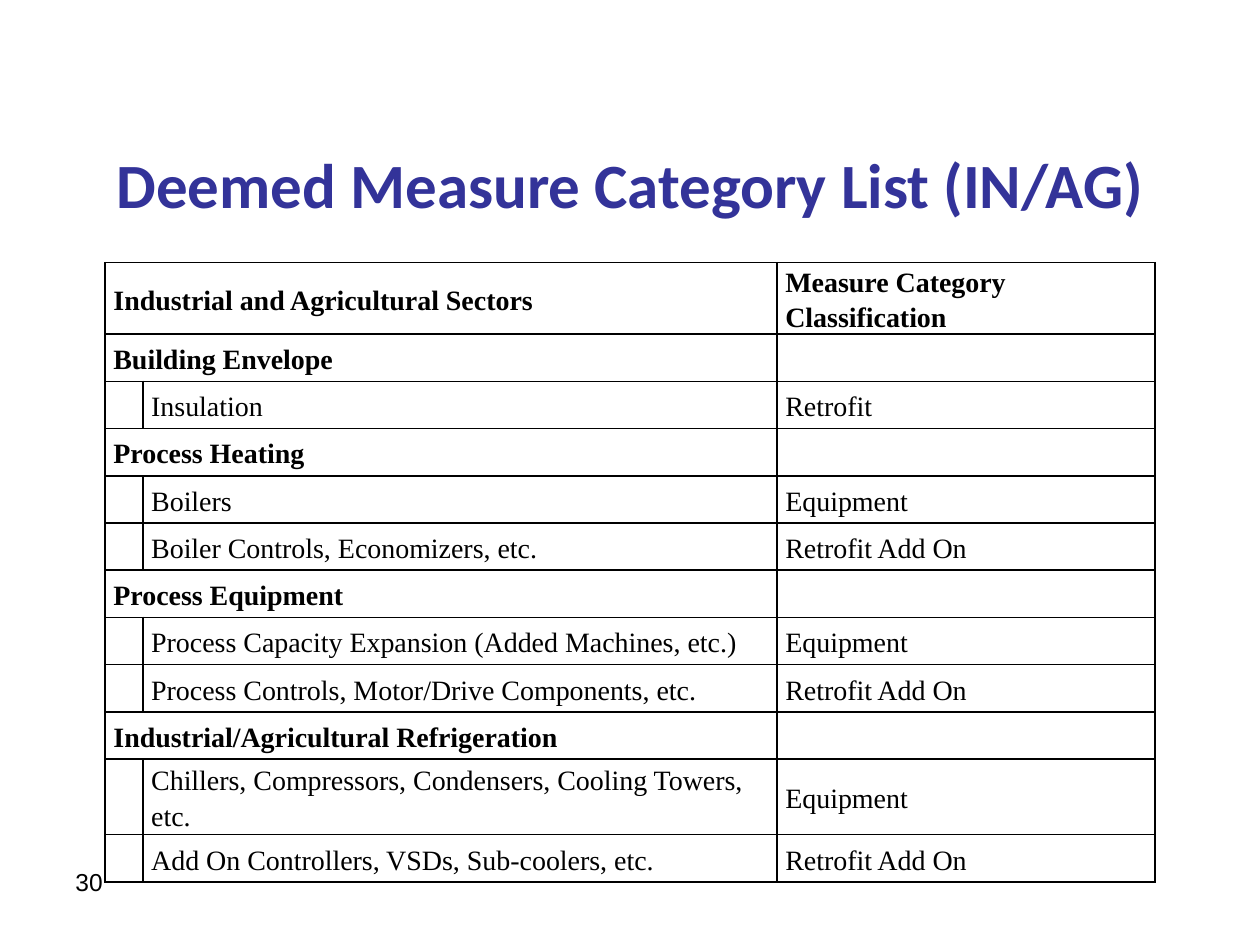
from dataclasses import dataclass
from typing import Any

from lxml.etree import SubElement
from pptx import Presentation
from pptx.dml.color import RGBColor
from pptx.enum.text import MSO_ANCHOR, PP_ALIGN
from pptx.oxml.ns import qn
from pptx.util import Emu, Pt

PX = 7620  # EMU per px, 120 px to the inch
BLACK, NAVY = "000000", "333399"


@dataclass
class Row:
    label: str
    category: str = ""
    heading: bool = False
    height: int = 45


@dataclass
class Label:
    text: str
    box: tuple[int, int, int, int]
    font: dict[str, Any]
    color: str
    align: PP_ALIGN = PP_ALIGN.LEFT
    anchor: MSO_ANCHOR = MSO_ANCHOR.TOP


COLUMNS = (36, 604, 360)
ROWS = [
    Row("Industrial and Agricultural Sectors", "Measure Category Classification", True),
    Row("Building Envelope", heading=True),
    Row("Insulation", "Retrofit"),
    Row("Process Heating", heading=True),
    Row("Boilers", "Equipment"),
    Row("Boiler Controls, Economizers, etc.", "Retrofit Add On"),
    Row("Process Equipment", heading=True),
    Row("Process Capacity Expansion (Added Machines, etc.)", "Equipment"),
    Row("Process Controls, Motor/Drive Components, etc.", "Retrofit Add On"),
    Row("Industrial/Agricultural Refrigeration", heading=True),
    Row("Chillers, Compressors, Condensers, Cooling Towers, etc.", "Equipment", height=72),
    Row("Add On Controllers, VSDs, Sub-coolers, etc.", "Retrofit Add On"),
]
LABELS = [
    Label("30", (60, 820, 220, 62), {"name": "Arial", "size": Pt(14)}, BLACK),
    Label("Deemed Measure Category List (IN/AG)", (60, 110, 1080, 130),
          {"name": "Calibri", "size": Pt(36), "bold": True}, NAVY,
          PP_ALIGN.CENTER, MSO_ANCHOR.MIDDLE),
]


def px(n: int) -> Emu:
    return Emu(n * PX)


def rgb(color: str) -> RGBColor:
    return RGBColor.from_string(color)


def set_all(obj: Any, values: dict[str, Any]) -> None:
    for name, value in values.items():
        setattr(obj, name, value)


def write(p: Any, text: str, font: dict[str, Any], color: str) -> None:
    r = p.add_run()
    r.text = text
    set_all(r.font, font)
    r.font.color.rgb = rgb(color)


def add_borders(cell: Any, color: str) -> None:
    tcPr = cell._tc.get_or_add_tcPr()
    for side in ("a:lnL", "a:lnR", "a:lnT", "a:lnB"):
        ln = SubElement(tcPr, qn(side), w=str(Pt(1)))
        SubElement(SubElement(ln, qn("a:solidFill")), qn("a:srgbClr"), val=color)


def format_cell(cell: Any, text: str, bold: bool) -> None:
    set_all(cell, {"margin_left": px(8), "margin_right": px(8), "margin_top": 0,
                   "margin_bottom": 0, "vertical_anchor": MSO_ANCHOR.MIDDLE})
    add_borders(cell, BLACK)
    cell.fill.background()
    if text:
        p = cell.text_frame.paragraphs[0]
        p.line_spacing = 1.15
        write(p, text, {"name": "Times New Roman", "size": Pt(16), "bold": bold}, BLACK)


def add_measures(s: Any, left: int, top: int) -> None:
    height = sum(row.height for row in ROWS)
    table = s.shapes.add_table(len(ROWS), len(COLUMNS), px(left), px(top),
                               px(sum(COLUMNS)), px(height)).table
    set_all(table, {"first_row": False, "horz_banding": False})
    for column, width in zip(table.columns, COLUMNS):
        column.width = px(width)
    for i, row in enumerate(ROWS):
        table.rows[i].height = px(row.height)
        # Headings span the indent column
        if row.heading:
            table.cell(i, 0).merge(table.cell(i, 1))
            texts = (row.label, "", row.category)
        else:
            texts = ("", row.label, row.category)
        for j, text in enumerate(texts):
            format_cell(table.cell(i, j), text, row.heading)


def add_label(s: Any, label: Label) -> None:
    tf = s.shapes.add_textbox(*map(px, label.box)).text_frame
    set_all(tf, {"word_wrap": True, "vertical_anchor": label.anchor})
    p = tf.paragraphs[0]
    p.alignment = label.align
    write(p, label.text, label.font, label.color)


def main() -> None:
    prs = Presentation()
    set_all(prs, {"slide_width": px(1200), "slide_height": px(900)})
    s = prs.slides.add_slide(prs.slide_layouts[6])

    # Measure table
    add_measures(s, 100, 250)

    # Page number and title
    for label in LABELS:
        add_label(s, label)

    prs.save("out.pptx")


if __name__ == "__main__":
    main()
